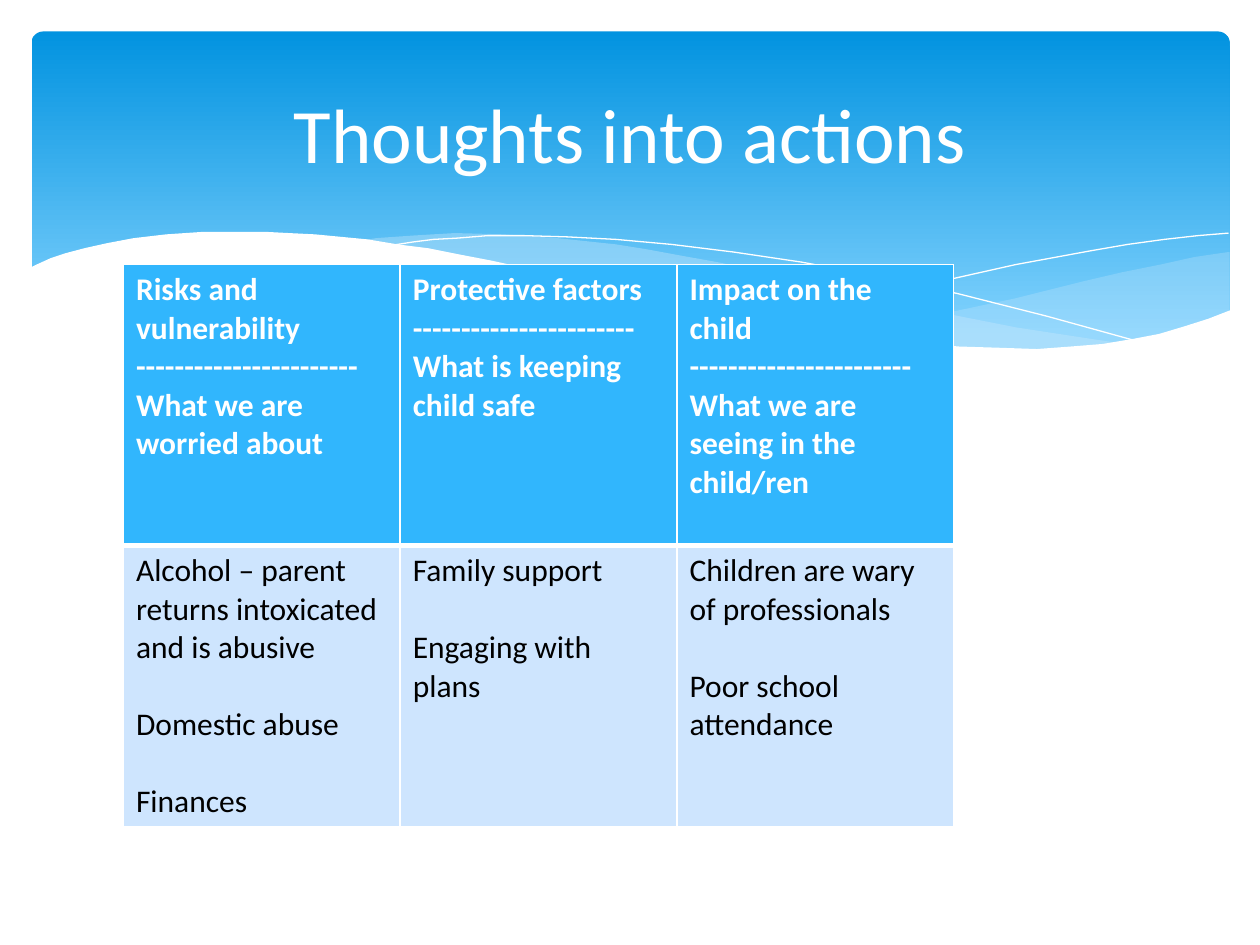
import pptx
import pptx.dml.color
import pptx.enum.shapes
import pptx.enum.text
import pptx.oxml
import pptx.oxml.ns
import pptx.util
from pptx.util import Inches

COLOURS = {
    "white": "FFFFFF",
    "black": "000000",
    "band_top": "0293E0",
    "band_bottom": "83D3FE",
    "wave": "C6E7FC",
    "header": "31B6FD",
    "body": "CEE5FE",
}
FONT = "Calibri"
DIVIDER = "-" * 23

RIGHT_WAVE = [
    (9.5, 1.75), (9.23, 1.79), (8.96, 1.85), (8.66, 1.91), (8.36, 1.98),
    (7.8, 2.12), (7.28, 2.23), (6.81, 2.32), (6.36, 2.4), (6.66, 2.44),
    (6.94, 2.47), (7.2, 2.5), (7.44, 2.52), (7.67, 2.52), (7.89, 2.53),
    (8.1, 2.52), (8.29, 2.51), (8.47, 2.49), (8.64, 2.47), (8.8, 2.44),
    (8.96, 2.4), (9.1, 2.37), (9.24, 2.32), (9.38, 2.27), (9.51, 2.22),
    (9.51, 1.75),
]
MIDDLE_WAVE = [
    (8.68, 2.48), (8.41, 2.44), (7.82, 2.35), (7.16, 2.22), (6.43, 2.06),
    (6.04, 1.97), (5.73, 1.89), (5.44, 1.83), (5.16, 1.78), (4.89, 1.73),
    (4.64, 1.69), (4.17, 1.64), (3.74, 1.61), (3.36, 1.6), (3.03, 1.62),
    (2.74, 1.64), (2.61, 1.66), (2.98, 1.71), (3.37, 1.78), (3.79, 1.86),
    (4.24, 1.97), (4.66, 2.07), (5.05, 2.15), (5.41, 2.23), (5.76, 2.3),
    (6.09, 2.36), (6.4, 2.41), (6.7, 2.45), (6.97, 2.49), (7.23, 2.51),
    (7.48, 2.52), (7.71, 2.53), (7.93, 2.53), (8.13, 2.53), (8.32, 2.52),
    (8.51, 2.5), (8.68, 2.48),
]
LONG_CURVE = [
    (2.84, 1.7), (3.03, 1.67), (3.19, 1.65), (3.38, 1.64), (3.62, 1.62),
    (3.91, 1.62), (4.25, 1.63), (4.64, 1.65), (5.08, 1.69), (5.57, 1.75),
    (6.11, 1.83), (6.7, 1.94), (7.35, 2.08), (8.06, 2.26), (8.82, 2.47),
]
RISING_CURVE = [
    (5.88, 2.32), (6.28, 2.21), (6.7, 2.1), (7.23, 1.98), (7.81, 1.85),
    (8.41, 1.74), (8.7, 1.69), (8.99, 1.65), (9.26, 1.62), (9.5, 1.6),
]
WHITE_WAVE = [
    (9.52, 2.21), (9.34, 2.28), (9.15, 2.34), (8.95, 2.4), (8.74, 2.44),
    (8.5, 2.48), (8.25, 2.5), (7.98, 2.52), (7.68, 2.51), (7.36, 2.5),
    (7.01, 2.47), (6.63, 2.43), (6.23, 2.37), (5.78, 2.29), (5.3, 2.2),
    (4.78, 2.08), (4.22, 1.95), (3.93, 1.88), (3.66, 1.82), (3.4, 1.77),
    (3.15, 1.72), (2.91, 1.69), (2.67, 1.65), (2.46, 1.63), (2.25, 1.61),
    (2.05, 1.6), (1.86, 1.59), (1.68, 1.59), (1.52, 1.59), (1.36, 1.59),
    (1.07, 1.61), (0.81, 1.64), (0.6, 1.68), (0.42, 1.72), (0.27, 1.76),
    (0.15, 1.8), (0.04, 1.85), (-0.02, 1.88), (-0.02, 3.04), (9.52, 3.04),
]

HEADINGS = [
    ["Risks and vulnerability", DIVIDER, "What we are worried about"],
    ["Protective factors", DIVIDER, "What is keeping child safe"],
    ["Impact on the child", DIVIDER, "What we are seeing in the child/ren"],
]
EXAMPLES = [
    ["Alcohol – parent returns intoxicated and is abusive", "Domestic abuse", "Finances"],
    ["Family support", "Engaging with plans"],
    ["Children are wary of professionals", "Poor school attendance"],
]


def colour(name):
    return pptx.dml.color.RGBColor.from_string(COLOURS[name])


def set_font(paragraph, size, name, bold=False):
    paragraph.font.name = FONT
    paragraph.font.size = pptx.util.Pt(size)
    paragraph.font.bold = bold
    paragraph.font.color.rgb = colour(name)


def trace(slide, left, top, points, closed):
    places = [(left + Inches(x), top + Inches(y)) for x, y in points]
    builder = slide.shapes.build_freeform(*places[0], scale=1.0)
    builder.add_line_segments(places[1:], close=closed)
    outline = builder.convert_to_shape()
    outline.shadow.inherit = False
    return outline


def add_wave(slide, left, top, points, fill, opacity=100):
    wave = trace(slide, left, top, points, True)
    wave.fill.solid()
    wave.fill.fore_color.rgb = colour(fill)
    wave.line.fill.background()
    if opacity < 100:
        tint = wave.fill._xPr.find(".//" + pptx.oxml.ns.qn("a:srgbClr"))
        alpha = pptx.oxml.parse_xml(
            f'<a:alpha {pptx.oxml.ns.nsdecls("a")} val="{opacity * 1000}"/>')
        tint.append(alpha)


def add_curve(slide, left, top, points):
    curve = trace(slide, left, top, points, False)
    curve.fill.background()
    curve.line.color.rgb = colour("white")
    curve.line.width = pptx.util.Pt(0)


def add_banner(slide, left, top, width, height):
    band = slide.shapes.add_shape(
        pptx.enum.shapes.MSO_SHAPE.ROUNDED_RECTANGLE, left, top, width, height)
    band.adjustments[0] = 0.034
    band.shadow.inherit = False
    band.line.fill.background()
    band.fill.gradient()
    band.fill.gradient_angle = 270
    stops = zip(band.fill.gradient_stops, ("band_top", "band_bottom"), (0, 0.9))
    for stop, name, position in stops:
        stop.color.rgb = colour(name)
        stop.position = position
    add_wave(slide, left, top, RIGHT_WAVE, "wave", 29)
    add_wave(slide, left, top, MIDDLE_WAVE, "wave", 40)
    add_curve(slide, left, top, LONG_CURVE)
    add_curve(slide, left, top, RISING_CURVE)
    add_wave(slide, left, top, WHITE_WAVE, "white")


def add_title(slide, left, top, width, height):
    title = slide.shapes.add_textbox(left, top, width, height).text_frame
    title.word_wrap = True
    title.vertical_anchor = pptx.enum.text.MSO_ANCHOR.MIDDLE
    heading = title.paragraphs[0]
    heading.text = "Thoughts into actions"
    heading.alignment = pptx.enum.text.PP_ALIGN.CENTER
    set_font(heading, 44, "white")


def set_borders(cell, bottom):
    properties = cell._tc.get_or_add_tcPr()
    widths = {"lnL": 1, "lnR": 1, "lnT": 1, "lnB": bottom}
    for index, (side, points) in enumerate(widths.items()):
        properties.insert(index, pptx.oxml.parse_xml(
            f'<a:{side} {pptx.oxml.ns.nsdecls("a")} w="{pptx.util.Pt(points)}">'
            f'<a:solidFill><a:srgbClr val="{COLOURS["white"]}"/></a:solidFill>'
            f'</a:{side}>'))


def fill_cell(cell, lines, fill, ink, bold, gap, bottom):
    cell.fill.solid()
    cell.fill.fore_color.rgb = colour(fill)
    set_borders(cell, bottom)
    cell.text = "\n".join(lines)
    for index, paragraph in enumerate(cell.text_frame.paragraphs):
        set_font(paragraph, 18, ink, bold)
        paragraph.space_before = pptx.util.Pt(gap if index else 0)


def add_actions_table(slide, left, top, width, height):
    actions = slide.shapes.add_table(2, 3, left, top, width, height).table
    for column, (heading, examples) in enumerate(zip(HEADINGS, EXAMPLES)):
        fill_cell(actions.cell(0, column), heading, "header", "white", True, 0, 3)
        fill_cell(actions.cell(1, column), examples, "body", "black", False, 22, 1)


def main():
    deck = pptx.Presentation()
    deck.slide_width = Inches(10)
    deck.slide_height = Inches(7.5)
    slide = deck.slides.add_slide(deck.slide_layouts[6])
    add_banner(slide, Inches(0.25), Inches(0.25), Inches(9.51), Inches(2.7))
    add_title(slide, Inches(0.5), Inches(0.37), Inches(9), Inches(1.37))
    add_actions_table(slide, Inches(0.98), Inches(2.1), Inches(6.59), Inches(4.46))
    deck.save("out.pptx")


if __name__ == "__main__":
    main()
